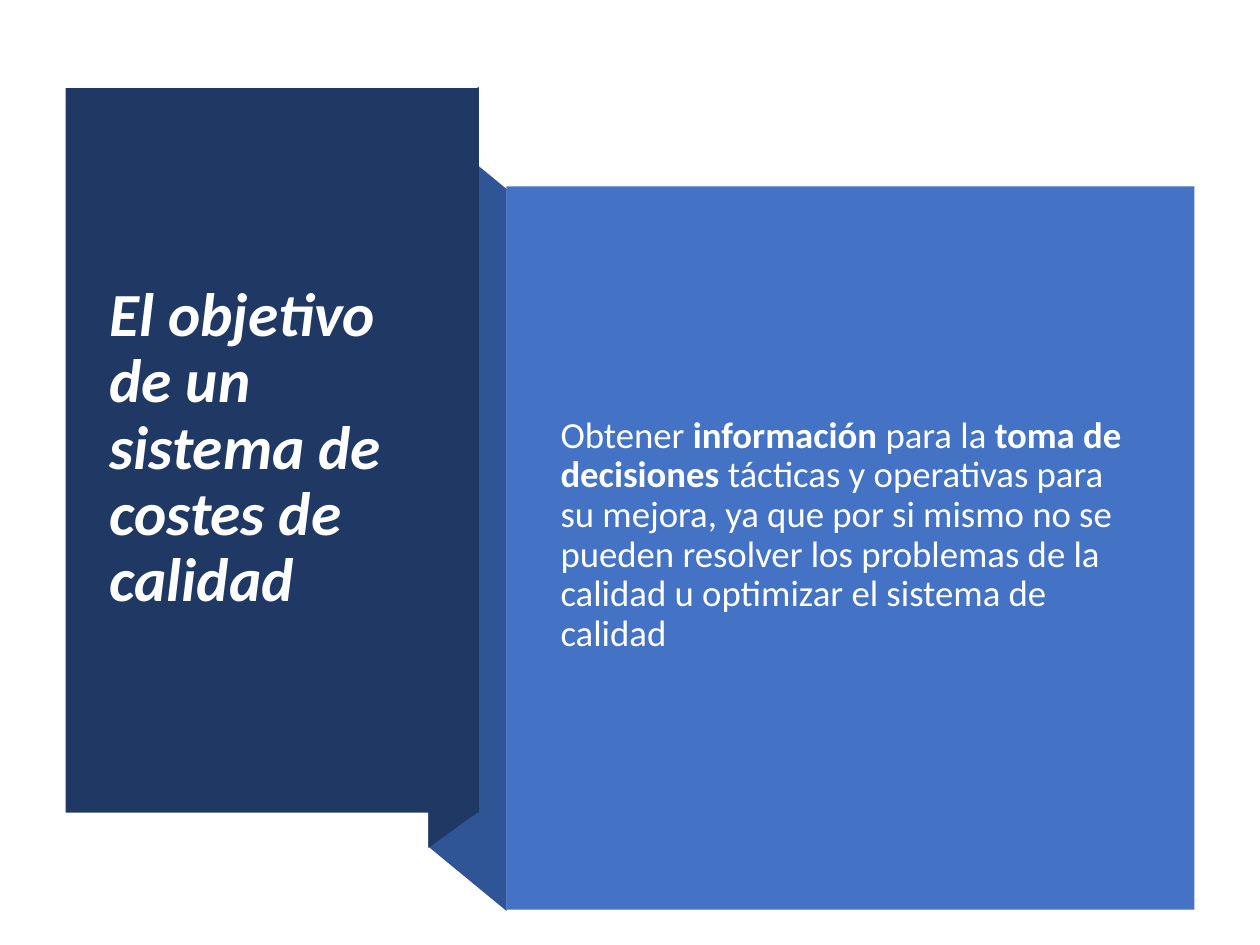
from dataclasses import dataclass

from pptx import Presentation
from pptx.dml.color import RGBColor
from pptx.enum.shapes import MSO_SHAPE
from pptx.enum.text import MSO_ANCHOR, MSO_AUTO_SIZE, PP_ALIGN
from pptx.util import Inches, Pt


@dataclass(frozen=True)
class Theme:
    """Colours, font and type sizes of the slide."""
    navy: str = "203864"
    fold: str = "2F5597"
    blue: str = "4472C4"
    title_text: str = "FFFFFF"
    body_text: str = "FEFFFF"
    font: str = "Calibri"
    title_size: int = 35
    body_size: int = 21


THEME = Theme()
TITLE = "El objetivo de un sistema de costes de calidad"
BODY = [
    ("Obtener ", False),
    ("información", True),
    (" para la ", False),
    ("toma de decisiones ", True),
    ("tácticas y operativas para su mejora, ya que por si mismo no se pueden "
     "resolver los problemas de la calidad u optimizar el sistema de calidad", False),
]


def paint(shape, color):
    """Give a shape a plain fill without outline or shadow."""
    shape.shadow.inherit = False
    shape.fill.solid()
    shape.fill.fore_color.rgb = RGBColor.from_string(color)
    shape.line.fill.background()


def place(shape, left, top, width, height):
    """Move and size a shape, in inches."""
    shape.left, shape.top = Inches(left), Inches(top)
    shape.width, shape.height = Inches(width), Inches(height)


def add_panel(slide, box, color):
    """Add a rectangle filling the box."""
    panel = slide.shapes.add_shape(MSO_SHAPE.RECTANGLE, *map(Inches, box))
    paint(panel, color)
    return panel


def add_fold(slide, box, slant, color):
    """Add a band with vertical sides whose right side is lowered by the slant."""
    left, top, width, height = box
    right = left + width
    corners = [(left, top), (right, top + slant),
               (right, top + slant + height), (left, top + height)]
    points = [(Inches(x), Inches(y)) for x, y in corners]
    builder = slide.shapes.build_freeform(*points[0])
    builder.add_line_segments(points[1:], close=True)
    paint(builder.convert_to_shape(), color)


def prepare_frame(text_frame):
    """Set wrapping and vertical centring of a text frame."""
    text_frame.word_wrap = True
    text_frame.auto_size = MSO_AUTO_SIZE.NONE
    text_frame.vertical_anchor = MSO_ANCHOR.MIDDLE


def style_paragraph(paragraph, size, color):
    """Set alignment, spacing and font of a paragraph and its runs."""
    paragraph.alignment = PP_ALIGN.LEFT
    paragraph.line_spacing = 0.9
    for run in paragraph.runs:
        run.font.name = THEME.font
        run.font.size = Pt(size)
        run.font.color.rgb = RGBColor.from_string(color)


def add_title_panel(slide, box):
    """Add the dark panel with the slide title on it."""
    left, top, width, height = box
    panel = add_panel(slide, box, THEME.navy)
    title = slide.shapes.title
    panel._element.addnext(title._element)
    place(title, left + 0.25, top + 0.37, width - 0.5, height - 0.76)
    prepare_frame(title.text_frame)
    title.text_frame.text = TITLE
    paragraph = title.text_frame.paragraphs[0]
    style_paragraph(paragraph, THEME.title_size, THEME.title_text)
    paragraph.runs[0].font.bold = True
    paragraph.runs[0].font.italic = True


def add_body_panel(slide, box):
    """Add the blue panel with the explanatory text on it."""
    left, top, width, height = box
    add_panel(slide, box, THEME.blue)
    text_box = slide.shapes.add_textbox(
        Inches(left + 0.26), Inches(top + 0.4),
        Inches(width - 0.58), Inches(height - 1))
    prepare_frame(text_box.text_frame)
    paragraph = text_box.text_frame.paragraphs[0]
    paragraph._p.get_or_add_pPr().set("marL", str(Inches(0.07)))
    for text, bold in BODY:
        run = paragraph.add_run()
        run.text = text
        run.font.bold = bold
    style_paragraph(paragraph, THEME.body_size, THEME.body_text)


def main():
    """Build the slide and save it."""
    presentation = Presentation()
    presentation.slide_width, presentation.slide_height = Inches(10), Inches(7.5)
    slide = presentation.slides.add_slide(presentation.slide_layouts[5])
    add_fold(slide, (3.4, 0.99, 0.62, 5.73), 0.51, THEME.fold)
    add_fold(slide, (3.4, 0.98, 0.4, 5.75), -0.29, THEME.navy)
    add_title_panel(slide, (0.52, 0.7, 3.28, 5.75))
    add_body_panel(slide, (4.02, 1.48, 5.46, 5.74))
    presentation.save("out.pptx")


if __name__ == "__main__":
    main()
